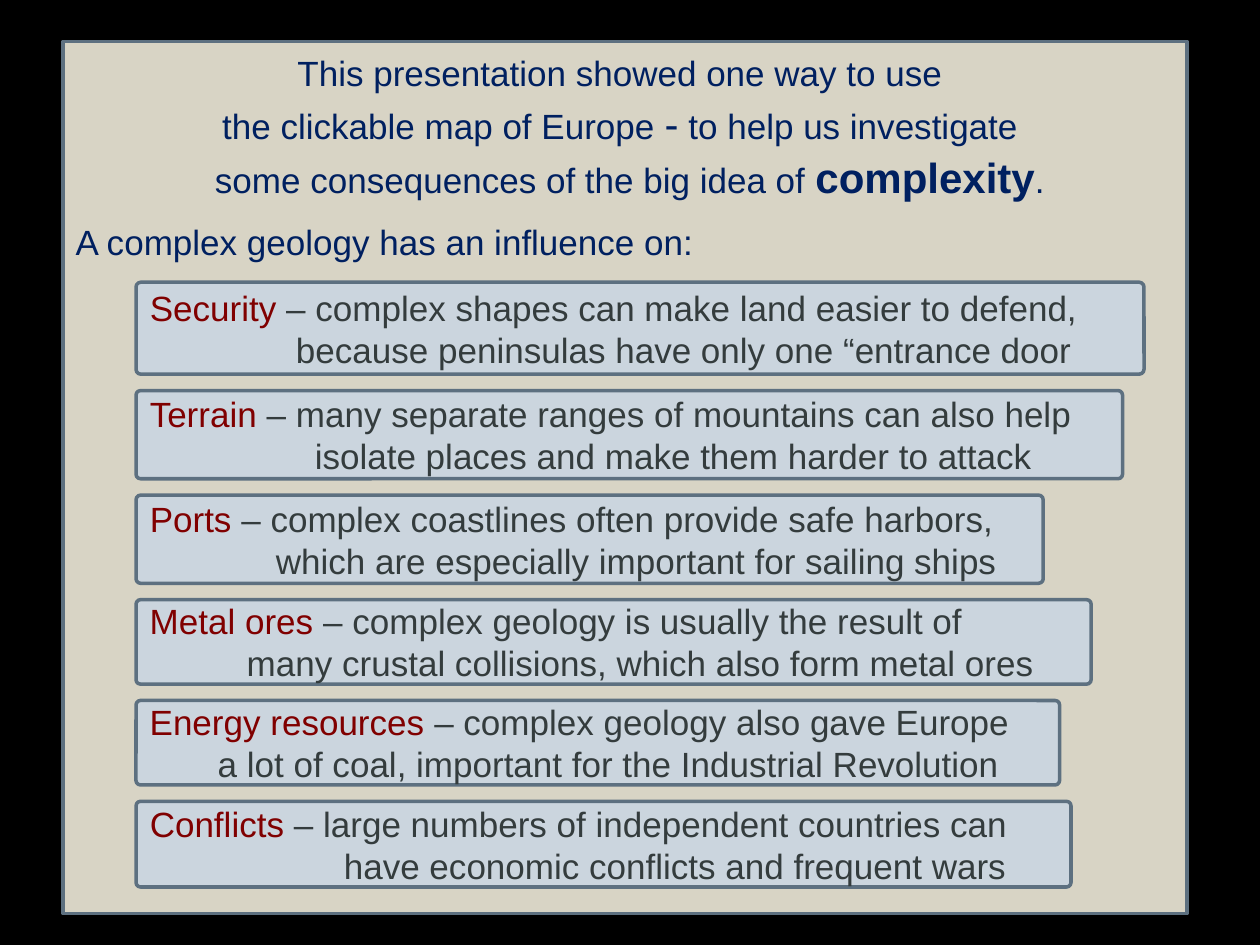
from lxml import etree
from pptx import Presentation
from pptx.dml.color import RGBColor
from pptx.enum.shapes import MSO_SHAPE
from pptx.enum.text import MSO_ANCHOR, MSO_AUTO_SIZE, PP_ALIGN
from pptx.oxml import parse_xml
from pptx.util import Inches, Pt

ROUNDED = MSO_SHAPE.ROUNDED_RECTANGLE
TOP, MIDDLE = MSO_ANCHOR.TOP, MSO_ANCHOR.MIDDLE
LEFT, CENTER = PP_ALIGN.LEFT, PP_ALIGN.CENTER
NO_AUTOFIT = MSO_AUTO_SIZE.NONE
TITLE_ONLY = 5
DRAWING_NS = "http://schemas.openxmlformats.org/drawingml/2006/main"

BLACK, SAND, MIST, SLATE = "000000", "D8D4C5", "CBD5DE", "5D7080"
NAVY, MAROON, CHARCOAL = "002060", "800000", "343C3D"
CORNER = 0.052

# Runs of each introductory line: text, size, bold
INTRO = [
    [("This presentation showed one way to use ", 20, False)],
    [("the clickable map of Europe ", 20, False), ("-", 24, False),
     (" to help us investigate ", 20, False)],
    [(" some consequences of the big idea of ", 20, False),
     ("complexity", 24, True), (".", 20, False)],
]
LEAD_IN = "A complex geology has an influence on:"

# Topic, first line, second line, second-line indent, box width, box height
INFLUENCES = [
    ("Security", "complex shapes can make land easier to defend,",
     "because peninsulas have only one “entrance door", 1.16, 8, 0.73),
    ("Terrain", "many separate ranges of mountains can also help",
     "isolate places and make them harder to attack", 1.31, 7.83, 0.7),
    ("Ports", "complex coastlines often provide safe harbors,",
     "which are especially important for sailing ships", 1.0, 7.2, 0.7),
    ("Metal ores", "complex geology is usually the result of",
     "many crustal collisions, which also form metal ores", 0.77, 7.58, 0.67),
    ("Energy resources", "complex geology also gave Europe",
     "a lot of coal, important for the Industrial Revolution", 0.54, 7.33, 0.67),
    ("Conflicts", "large numbers of independent countries can",
     "have economic conflicts and frequent wars", 1.54, 7.42, 0.68),
]


def rgb(hex_code):
    return RGBColor.from_string(hex_code)


def set_all(target, **values):
    for name, value in values.items():
        setattr(target, name, value)


def paint(shape, fill):
    shape.fill.solid()
    shape.fill.fore_color.rgb = rgb(fill)
    shape.line.color.rgb = rgb(SLATE)
    shape.line.width = Pt(2)


def add_run(paragraph, text, color, size=20, bold=False):
    run = paragraph.add_run()
    run.text = text
    set_all(run.font, name="Arial", size=Pt(size), bold=bold)
    run.font.color.rgb = rgb(color)


def round_corners(placeholder):
    """Give a placeholder the rounded outline of the item boxes."""
    outline = parse_xml(
        f'<a:prstGeom xmlns:a="{DRAWING_NS}" prst="roundRect"><a:avLst>'
        f'<a:gd name="adj" fmla="val {round(CORNER * 100000)}"/>'
        '</a:avLst></a:prstGeom>')
    placeholder.element.spPr.find(etree.QName(DRAWING_NS, "xfrm")).addnext(outline)


def build_panel(slide, left, top, width, height):
    panel = slide.shapes.title
    set_all(panel, left=left, top=top, width=width, height=height)
    round_corners(panel)
    paint(panel, SAND)
    frame = panel.text_frame
    set_all(frame, word_wrap=True, auto_size=NO_AUTOFIT,
            vertical_anchor=TOP, margin_top=Inches(0.08))

    # Centred introduction
    for number, runs in enumerate(INTRO):
        paragraph = frame.add_paragraph() if number else frame.paragraphs[0]
        set_all(paragraph, alignment=CENTER, space_before=Pt(2 if number else 0))
        for text, size, bold in runs:
            add_run(paragraph, text, NAVY, size, bold)

    # Lead-in to the list of influences
    lead_in = frame.add_paragraph()
    set_all(lead_in, alignment=LEFT, space_before=Pt(11))
    add_run(lead_in, LEAD_IN, NAVY)


def build_influence(slide, left, top, width, height, topic, first, second, indent):
    box = slide.shapes.add_shape(ROUNDED, left, top, width, height)
    box.adjustments[0] = CORNER
    box.shadow.inherit = False
    paint(box, MIST)
    frame = box.text_frame
    set_all(frame, word_wrap=True, vertical_anchor=MIDDLE)

    opening = frame.paragraphs[0]
    add_run(opening, f"{topic} ", MAROON)
    add_run(opening, f"– {first}", CHARCOAL)

    continuation = frame.add_paragraph()
    continuation._p.get_or_add_pPr().set("marL", str(indent))
    add_run(continuation, second, CHARCOAL)
    for paragraph in frame.paragraphs:
        paragraph.alignment = LEFT


def build_influences(slide, left, top, gap):
    for topic, first, second, indent, width, height in INFLUENCES:
        build_influence(slide, left, top, Inches(width), Inches(height),
                        topic, first, second, Inches(indent))
        top += Inches(height) + gap


def main():
    presentation = Presentation()
    set_all(presentation, slide_width=Inches(10), slide_height=Inches(7.5))
    slide = presentation.slides.add_slide(presentation.slide_layouts[TITLE_ONLY])
    slide.background.fill.solid()
    slide.background.fill.fore_color.rgb = rgb(BLACK)

    build_panel(slide, Inches(0.5), Inches(0.33), Inches(8.92), Inches(6.92))
    build_influences(slide, Inches(1.08), Inches(2.24), Inches(0.13))
    presentation.save("out.pptx")


if __name__ == "__main__":
    main()
